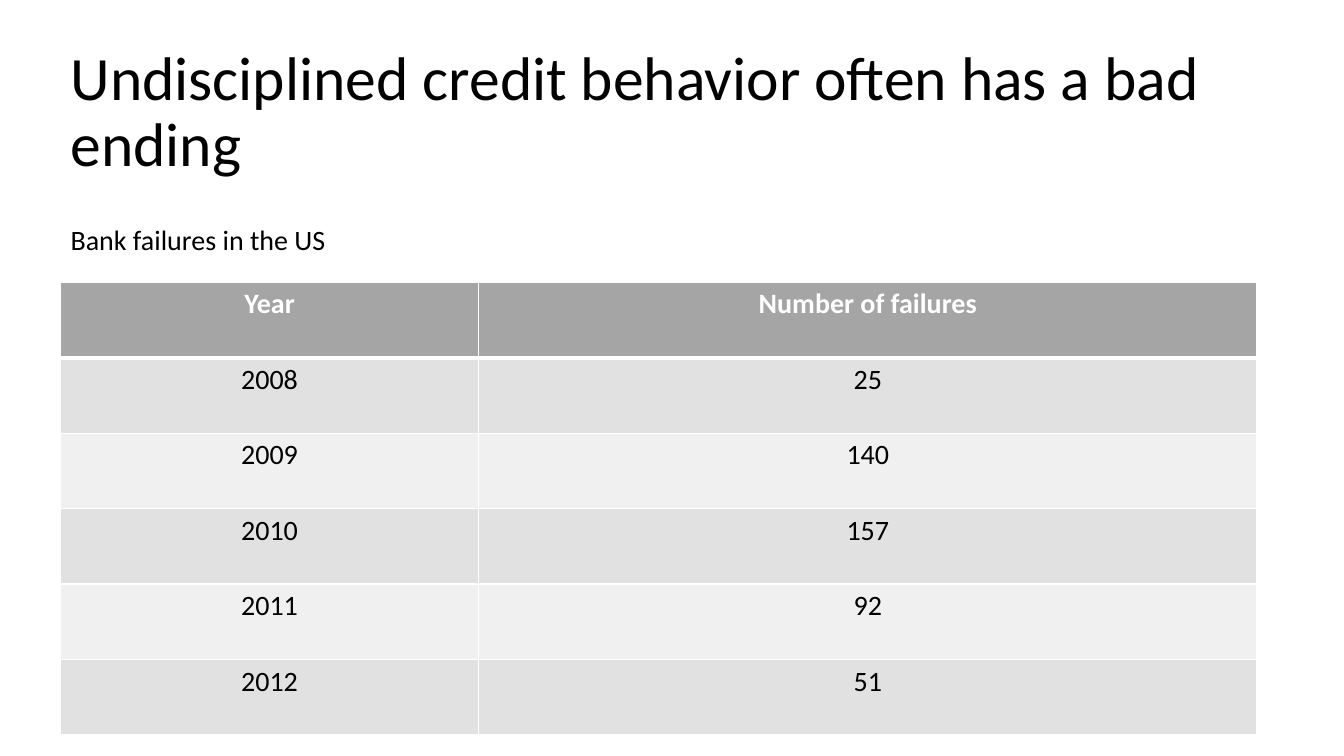
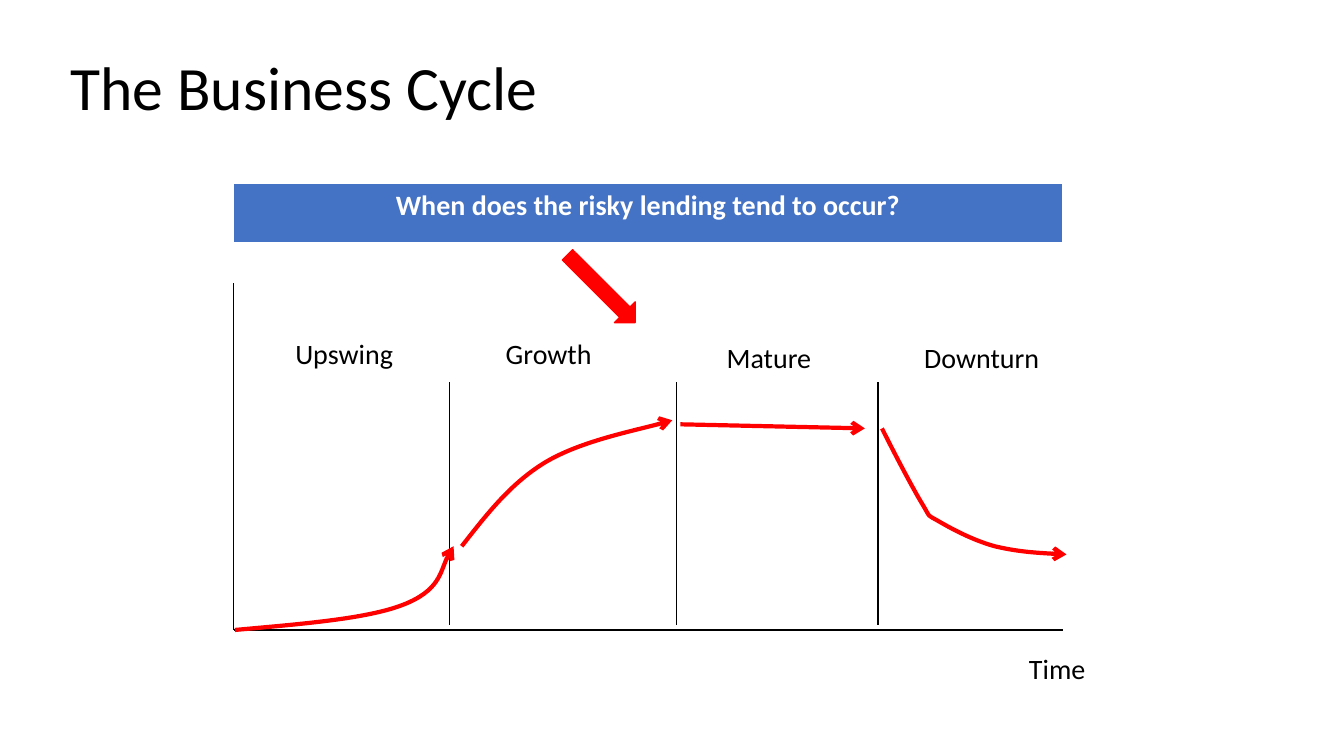
from lxml.etree import SubElement
from pptx import Presentation
from pptx.dml.color import RGBColor
from pptx.enum.shapes import MSO_CONNECTOR as Connector, MSO_SHAPE as Preset
from pptx.enum.text import MSO_ANCHOR as Anchor, MSO_AUTO_SIZE as AutoSize, PP_ALIGN as Align
from pptx.oxml.ns import qn
from pptx.util import Pt

# Shared style
FONT = "Calibri"
TITLE_SIZE, TEXT_SIZE = 44, 20
BLACK, WHITE, RED, BLUE = "000000", "FFFFFF", "FF0000", "4472C4"
HEADER_GRAY, BANDS = "A5A5A5", ("E1E1E1", "F0F0F0")
LEFT, TITLE_TOP, TEXT_WIDTH = 43.2, 28.8, 828

# Slide 1: bank failures
FAILURES_TITLE = "Undisciplined credit behavior often has a bad ending"
FAILURES_CAPTION = "Bank failures in the US"
FAILURES = [
    ("Year", "Number of failures"),
    ("2008", "25"),
    ("2009", "140"),
    ("2010", "157"),
    ("2011", "92"),
    ("2012", "51"),
]

# Slide 2: business cycle, all positions in points
CYCLE_TITLE = "The Business Cycle"
CYCLE_QUESTION = "When does the risky lending tend to occur?"
AXIS_LEFT, AXIS_TOP, AXIS_RIGHT, AXIS_BOTTOM = 167, 202.3, 759.6, 450
DIVIDER_TOP, DIVIDER_BOTTOM = 272.9, 446.4
DIVIDERS = (321.1, 483.1, 627.1)
LABELS = [  # text, left, top, width
    ("Time", 727.9, 461.5, 55.4),
    ("Upswing", 203.8, 236.9, 85),
    ("Growth", 354.2, 236.9, 76.3),
    ("Mature", 511.9, 239.8, 77),
    ("Downturn", 653, 239.8, 97.2),
]
# Each curve: a start, then two control points and an end per piece
CURVES = {
    "Upswing": [(167.8, 450),
                (215.3, 445.7), (262.1, 442.1), (288, 432),
                (313.9, 421.9), (318.2, 396.7), (324, 390.2)],
    "Growth": [(329.8, 390.2),
               (347.8, 367.2), (365, 344.9), (390.2, 329.8),
               (414.7, 315.4), (463.7, 305.3), (480.2, 300.2)],
    "Downturn": [(630, 306),
                 (640.8, 327.6), (652.3, 349.2), (658.8, 360),
                 (665.3, 370.8), (661.7, 367.2), (670.3, 372.2),
                 (679, 377.3), (694.8, 385.9), (710.6, 390.2),
                 (725.8, 393.8), (743.8, 395.3), (761.8, 396)],
}
MATURE_START, MATURE_END = (486, 303.1), (617.8, 306)


def color(value):
    return RGBColor.from_string(value)


def points(*lengths):
    return [Pt(length) for length in lengths]


def fill_solid(target, value):
    target.fill.solid()
    target.fill.fore_color.rgb = color(value)


def style_text(text_frame, size=TEXT_SIZE, text_color=BLACK, bold=False,
               align=Align.LEFT, line_spacing=1.0):
    for paragraph in text_frame.paragraphs:
        paragraph.alignment = align
        paragraph.line_spacing = line_spacing
        paragraph.space_before = Pt(0)
        for run in paragraph.runs:
            run.font.name = FONT
            run.font.size = Pt(size)
            run.font.bold = bold
            run.font.color.rgb = color(text_color)


def fill_placeholder(placeholder, text, top, height, size, anchor):
    placeholder.left, placeholder.top, placeholder.width, placeholder.height = points(
        LEFT, top, TEXT_WIDTH, height)
    text_frame = placeholder.text_frame
    text_frame.text = text
    text_frame.auto_size = AutoSize.NONE
    text_frame.vertical_anchor = anchor
    style_text(text_frame, size, line_spacing=0.9)


def add_slide(presentation, layout_index, title, title_height):
    slide = presentation.slides.add_slide(presentation.slide_layouts[layout_index])
    fill_placeholder(slide.shapes.title, title, TITLE_TOP, title_height, TITLE_SIZE, Anchor.MIDDLE)
    return slide


def border_cell(cell, bottom_width):
    properties = cell._tc.get_or_add_tcPr()
    widths = {"a:lnL": 1, "a:lnR": 1, "a:lnT": 1, "a:lnB": bottom_width}
    for position, (tag, width) in enumerate(widths.items()):
        line = SubElement(properties, qn(tag), w=str(Pt(width)))
        SubElement(SubElement(line, qn("a:solidFill")), qn("a:srgbClr"), val=WHITE)
        properties.insert(position, line)


def add_table(slide, rows, left, top, column_widths, row_height, header_fill):
    frame = slide.shapes.add_table(len(rows), len(column_widths), *points(
        left, top, sum(column_widths), row_height * len(rows)))
    table = frame.table
    table.horz_banding = False
    for column, width in zip(table.columns, column_widths):
        column.width = Pt(width)
    for row_index, texts in enumerate(rows):
        table.rows[row_index].height = Pt(row_height)
        header = row_index == 0
        for column_index, text in enumerate(texts):
            cell = table.cell(row_index, column_index)
            cell.text_frame.text = text
            style_text(cell.text_frame, text_color=WHITE if header else BLACK,
                       bold=header, align=Align.CENTER)
            fill_solid(cell, header_fill if header else BANDS[(row_index - 1) % 2])
            border_cell(cell, 3 if header else 1)


def style_line(shape, line_color, width, arrow=False):
    shape.line.color.rgb = color(line_color)
    shape.line.width = Pt(width)
    if arrow:
        SubElement(shape.line._get_or_add_ln(), qn("a:tailEnd"), type="arrow")


def add_line(slide, start, end, line_color=BLACK, width=1, arrow=False):
    connector = slide.shapes.add_connector(Connector.STRAIGHT, *points(*start, *end))
    style_line(connector, line_color, width, arrow)
    SubElement(connector.element.spPr, qn("a:effectLst"))


def add_curve(slide, curve):
    start, *rest = [points(*point) for point in curve]
    builder = slide.shapes.build_freeform(*start)
    builder.add_line_segments(rest, close=False)
    shape = builder.convert_to_shape()
    # Join every three line segments into one cubic piece
    segments = list(shape.element.iter(qn("a:lnTo")))
    outline = segments[0].getparent()
    for first in range(0, len(segments), 3):
        cubic = SubElement(outline, qn("a:cubicBezTo"))
        for segment in segments[first:first + 3]:
            cubic.append(segment[0])
            outline.remove(segment)
    shape.fill.background()
    shape.shadow.inherit = False
    style_line(shape, RED, 3, arrow=True)


def add_label(slide, text, left, top, width):
    text_frame = slide.shapes.add_textbox(*points(left, top, width, 31.7)).text_frame
    text_frame.text = text
    text_frame.word_wrap = False
    text_frame.auto_size = AutoSize.SHAPE_TO_FIT_TEXT
    style_text(text_frame)


def build_failures(presentation):
    slide = add_slide(presentation, 1, FAILURES_TITLE, 104.4)
    caption = slide.placeholders[1]
    fill_placeholder(caption, FAILURES_CAPTION, 157.7, 342.7, TEXT_SIZE, Anchor.TOP)
    properties = caption.text_frame.paragraphs[0]._p.get_or_add_pPr()
    properties.set("marL", "0")
    properties.set("indent", "0")
    SubElement(properties, qn("a:buNone"))
    add_table(slide, FAILURES, LEFT, 201.6, (298.8, 555.8), 53.9, HEADER_GRAY)


def build_cycle(presentation):
    slide = add_slide(presentation, 5, CYCLE_TITLE, 72)
    # Axes and phase dividers
    add_line(slide, (AXIS_LEFT, AXIS_TOP), (AXIS_LEFT, AXIS_BOTTOM))
    add_line(slide, (AXIS_LEFT, AXIS_BOTTOM), (AXIS_RIGHT, AXIS_BOTTOM))
    for x in DIVIDERS:
        add_line(slide, (x, DIVIDER_TOP), (x, DIVIDER_BOTTOM))
    for label in LABELS:
        add_label(slide, *label)
    # Cycle
    for curve in CURVES.values():
        add_curve(slide, curve)
    add_line(slide, MATURE_START, MATURE_END, RED, 3, arrow=True)
    # Question banner and pointer
    add_table(slide, [(CYCLE_QUESTION,)], AXIS_LEFT, 131, (591.8,), 43.2, BLUE)
    pointer = slide.shapes.add_shape(Preset.STRIPED_RIGHT_ARROW, *points(395.3, 195.8, 68.4, 20.9))
    pointer.rotation = 45
    pointer.shadow.inherit = False
    fill_solid(pointer, RED)
    style_line(pointer, RED, 1)


def main():
    presentation = Presentation()
    presentation.slide_width, presentation.slide_height = points(960, 540)
    build_failures(presentation)
    build_cycle(presentation)
    presentation.save("out.pptx")


if __name__ == "__main__":
    main()
